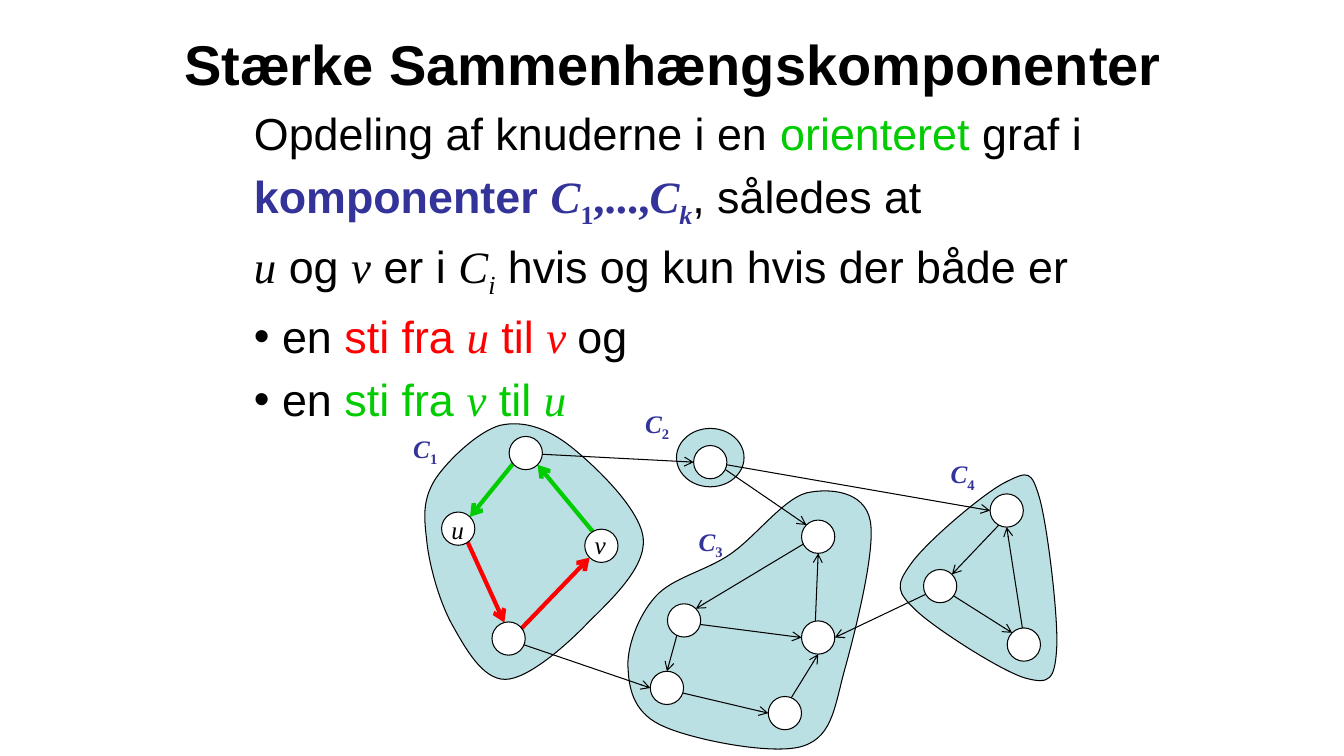
from math import cos, radians, sin

from lxml.etree import SubElement
from pptx import Presentation
from pptx.dml.color import RGBColor
from pptx.enum.shapes import MSO_CONNECTOR, MSO_SHAPE
from pptx.enum.text import MSO_ANCHOR, PP_ALIGN
from pptx.oxml.ns import qn
from pptx.util import Inches, Pt

BLACK = RGBColor(0x00, 0x00, 0x00)
WHITE = RGBColor(0xFF, 0xFF, 0xFF)
TEAL = RGBColor(0xBB, 0xE0, 0xE3)
BLUE = RGBColor(0x33, 0x33, 0x99)
RED = RGBColor(0xFF, 0x00, 0x00)
GREEN = RGBColor(0x00, 0xCC, 0x00)

# Run formats
MATH = dict(font="Times New Roman", italic=True)
SUB = dict(MATH, baseline=-25000)
BLUE_BOLD = dict(color=BLUE, bold=True)
SYMBOL = dict(BLUE_BOLD, **MATH)
INDEX = dict(SYMBOL, baseline=-25000)
DIGIT = dict(INDEX, italic=False)
RED_TEXT, GREEN_TEXT = dict(color=RED), dict(color=GREEN)
RED_MATH, GREEN_MATH = dict(MATH, color=RED), dict(MATH, color=GREEN)

TITLE = "Stærke Sammenhængskomponenter"
DEFINITION = [
    [("Opdeling af knuderne i en ", {}), ("orienteret", GREEN_TEXT), (" graf i", {})],
    [("komponenter ", BLUE_BOLD), ("C", SYMBOL), ("1", DIGIT),
     (",...,", dict(SYMBOL, italic=False)), ("C", SYMBOL), ("k", INDEX),
     (", således at", {})],
    [("u", MATH), (" og ", {}), ("v", MATH), (" er i ", {}), ("C", MATH), ("i", SUB),
     (" hvis og kun hvis der både er", {})],
]
CONDITIONS = [
    [(" en ", {}), ("sti fra ", RED_TEXT), ("u", RED_MATH), (" til ", RED_TEXT),
     ("v ", RED_MATH), ("og", {})],
    [(" en ", {}), ("sti fra ", GREEN_TEXT), ("v", GREEN_MATH), (" til ", GREEN_TEXT),
     ("u", GREEN_MATH)],
]

# Closed Bézier outlines: a start point, then two controls and an end per curve
COMPONENTS = [
    [(7.24, 5.5), (7.49, 5.33), (7.77, 4.95), (8, 4.89), (8.23, 4.84), (8.57, 4.87),
     (8.63, 5.16), (8.69, 5.44), (8.49, 6.23), (8.39, 6.6), (8.28, 6.98), (8.27, 7.3),
     (7.97, 7.4), (7.68, 7.5), (6.88, 7.34), (6.59, 7.21), (6.3, 7.09), (6.24, 6.86),
     (6.23, 6.64), (6.21, 6.43), (6.33, 6.11), (6.5, 5.92), (6.67, 5.73), (6.99, 5.67),
     (7.24, 5.5)],
    [(9.98, 4.78), (10.2, 4.67), (10.23, 4.67), (10.31, 4.94), (10.39, 5.22),
     (10.5, 6.14), (10.48, 6.44), (10.46, 6.74), (10.41, 6.79), (10.18, 6.73),
     (9.95, 6.67), (9.28, 6.24), (9.09, 6.06), (8.89, 5.87), (8.88, 5.81), (9.03, 5.6),
     (9.18, 5.38), (9.77, 4.88), (9.98, 4.78)],
    [(4.23, 5.34), (4.2, 5.1), (4.2, 4.94), (4.32, 4.75), (4.44, 4.57), (4.74, 4.28),
     (4.96, 4.22), (5.18, 4.17), (5.42, 4.24), (5.66, 4.43), (5.9, 4.62), (6.35, 5.05),
     (6.38, 5.34), (6.41, 5.63), (6.06, 5.95), (5.83, 6.18), (5.61, 6.41), (5.23, 6.74),
     (5.01, 6.74), (4.78, 6.74), (4.61, 6.42), (4.48, 6.19), (4.35, 5.95), (4.25, 5.58),
     (4.23, 5.34)],
]
SINGLE_COMPONENT = (6.71, 4.25, 0.67, 0.58)

NODE_SIZE = 0.33
NODES = {  # left, top
    "u": (4.38, 5.08), "v": (5.8, 5.25), "1 top": (5.05, 4.33), "1 low": (4.88, 6.17),
    "2": (6.88, 4.42),
    "3 top": (7.95, 5.16), "3 left": (6.62, 5.99), "3 right": (7.95, 6.16),
    "3 corner": (6.45, 6.66), "3 low": (7.62, 6.91),
    "4 top": (9.82, 4.9), "4 left": (9.16, 5.65), "4 low": (9.99, 6.23),
}
# Angles on the rim of a node, clockwise from the right
RIM = {"E": 0, "SE": 45, "S": 90, "SW": 135, "W": 180, "NW": 225, "NNW": 255, "N": 270,
       "NE": 315}
THIN, THICK = 0.75, 3
EDGES = [  # start inside one node, end node, rim side, colour, width
    ((7.08, 4.58), "3 top", "NW", BLACK, THIN),
    ((9.32, 5.83), "3 right", "E", BLACK, THIN),
    ((7.03, 4.58), "4 top", "W", BLACK, THIN),
    ((9.33, 5.83), "4 low", "NW", BLACK, THIN),
    ((10.17, 6.42), "4 top", "S", BLACK, THIN),
    ((10.01, 5.1), "4 left", "NE", BLACK, THIN),
    ((5.25, 4.5), "2", "W", BLACK, THIN),
    ((6.75, 6.17), "3 right", "W", BLACK, THIN),
    ((8.08, 6.33), "3 top", "S", BLACK, THIN),
    ((7.75, 7.08), "3 right", "S", BLACK, THIN),
    ((6.58, 6.83), "3 low", "W", BLACK, THIN),
    ((6.75, 6.17), "3 corner", "N", BLACK, THIN),
    ((8.08, 5.33), "3 left", "NE", BLACK, THIN),
    ((5, 6.33), "3 corner", "W", BLACK, THIN),
    ((4.58, 5.25), "1 low", "NNW", RED, THICK),
    ((5.08, 6.33), "v", "SW", RED, THICK),
    ((6, 5.42), "1 top", "SE", GREEN, THICK),
    ((5.17, 4.5), "u", "NE", GREEN, THICK),
]
LABELS = [  # left, top, width, runs
    (4, 4.25, 0.45, [("C", SYMBOL), ("1", DIGIT)]),
    (9.33, 4.5, 0.45, [("C", SYMBOL), ("4", DIGIT)]),
    (6.83, 5.17, 0.45, [("C", SYMBOL), ("3", DIGIT)]),
    (6.3, 4, 0.45, [("C", SYMBOL), ("2", DIGIT)]),
    (4.38, 5.05, 0.33, [("u", MATH)]),
    (5.8, 5.2, 0.31, [("v", MATH)]),
]


def add_run(p, text, size, font="Arial", color=BLACK, bold=False, italic=False, baseline=0):
    r = p.add_run()
    r.text = text
    r.font.name, r.font.size = font, Pt(size)
    r.font.bold, r.font.italic = bold, italic
    r.font.color.rgb = color
    if baseline:
        r.font._element.set("baseline", str(baseline))


def add_text(slide, box, paragraphs, size, align=PP_ALIGN.LEFT, anchor=MSO_ANCHOR.TOP,
             wrap=True, space_before=0, bullets_from=None):
    """Add a text box; space_before is a percentage of the line."""
    tf = slide.shapes.add_textbox(*map(Inches, box)).text_frame
    tf.word_wrap, tf.vertical_anchor = wrap, anchor
    for i, runs in enumerate(paragraphs):
        p = tf.add_paragraph() if i else tf.paragraphs[0]
        p.alignment = align
        pPr = p._p.get_or_add_pPr()
        if space_before:
            before = SubElement(pPr, qn("a:spcBef"))
            SubElement(before, qn("a:spcPct")).set("val", str(space_before * 1000))
        if bullets_from is not None and i >= bullets_from:
            SubElement(pPr, qn("a:buFont")).set("typeface", "Arial")
            SubElement(pPr, qn("a:buChar")).set("char", "•")
        for text, style in runs:
            add_run(p, text, size, **style)


def paint(sp, fill):
    sp.shadow.inherit = False
    sp.fill.solid()
    sp.fill.fore_color.rgb = fill
    sp.line.color.rgb = BLACK
    sp.line.width = Pt(THIN)


def add_ellipse(slide, box, fill):
    paint(slide.shapes.add_shape(MSO_SHAPE.OVAL, *map(Inches, box)), fill)


def add_component(slide, outline):
    """Draw a closed outline, joining every three line segments into one Bézier curve."""
    start, *points = [tuple(map(Inches, point)) for point in outline]
    builder = slide.shapes.build_freeform(*start)
    builder.add_line_segments(points, close=True)
    sp = builder.convert_to_shape()
    segments = list(sp._element.iter(qn("a:lnTo")))
    for i in range(0, len(points), 3):
        first, *others = segments[i:i + 3]
        first.tag = qn("a:cubicBezTo")
        for segment in others:
            first.append(segment[0])
            segment.getparent().remove(segment)
    paint(sp, TEAL)


def add_edge(slide, start, target, side, color, width):
    radius, angle = NODE_SIZE / 2, radians(RIM[side])
    left, top = NODES[target]
    end = (left + radius * (1 + cos(angle)), top + radius * (1 + sin(angle)))
    line = slide.shapes.add_connector(MSO_CONNECTOR.STRAIGHT, *map(Inches, start + end))
    line.line.color.rgb = color
    line.line.width = Pt(width)
    SubElement(line.line._get_or_add_ln(), qn("a:tailEnd")).set("type", "arrow")
    SubElement(line._element.spPr, qn("a:effectLst"))


def main():
    prs = Presentation()
    prs.slide_width, prs.slide_height = Inches(13.33), Inches(7.5)
    slide = prs.slides.add_slide(prs.slide_layouts[6])
    for outline in COMPONENTS:
        add_component(slide, outline)
    add_ellipse(slide, SINGLE_COMPONENT, TEAL)
    for edge in EDGES:
        add_edge(slide, *edge)
    add_text(slide, (1.67, 0, 10, 1.25), [[(TITLE, dict(bold=True))]], 40,
             align=PP_ALIGN.CENTER, anchor=MSO_ANCHOR.MIDDLE)
    add_text(slide, (2.42, 1, 8.42, 3.42), DEFINITION + CONDITIONS, 32,
             space_before=20, bullets_from=len(DEFINITION))
    for left, top in NODES.values():
        add_ellipse(slide, (left, top, NODE_SIZE, NODE_SIZE), WHITE)
    for left, top, width, runs in LABELS:
        add_text(slide, (left, top, width, 0.4), [runs], 18, wrap=False)
    prs.save("out.pptx")


if __name__ == "__main__":
    main()
